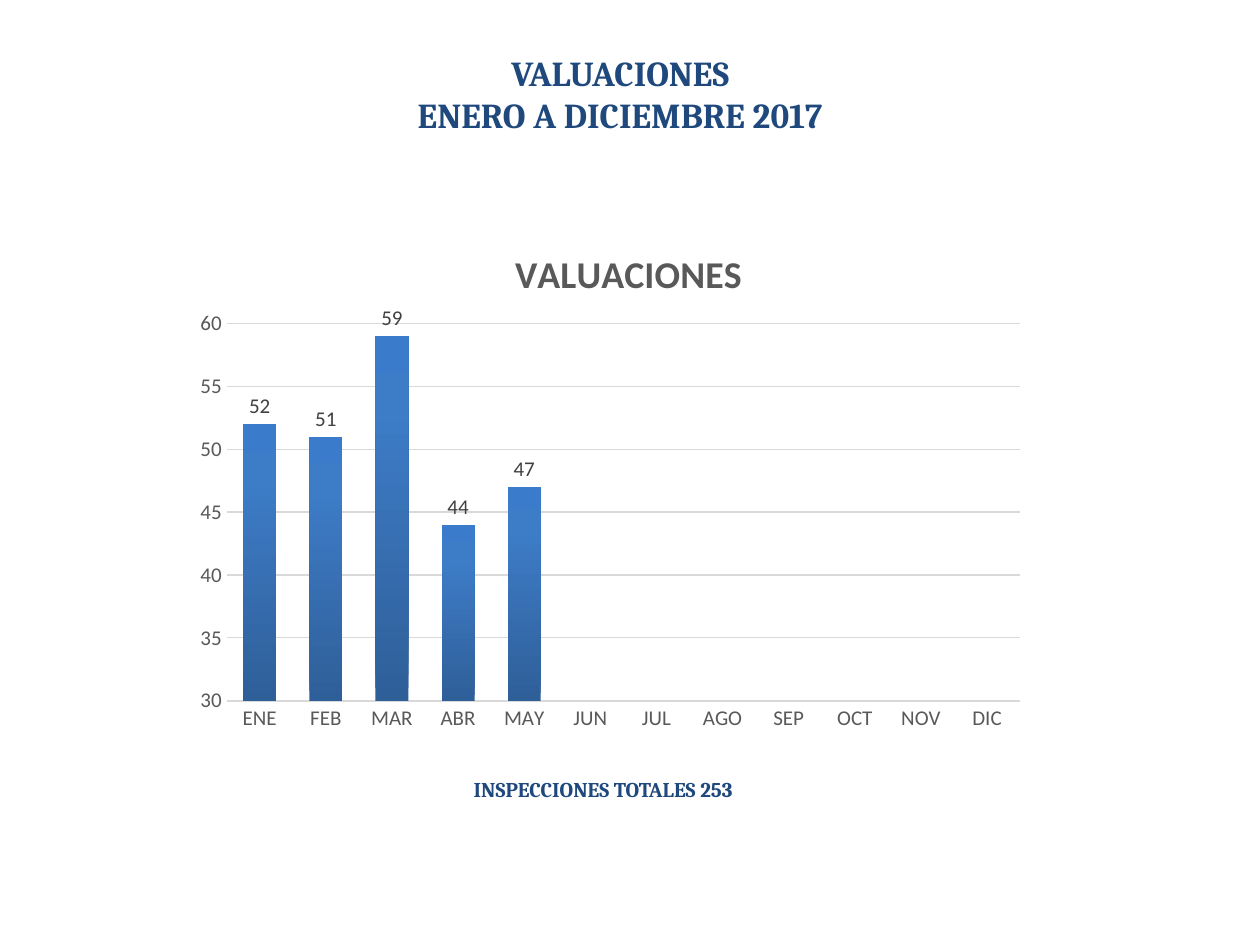
from dataclasses import dataclass

from copy import deepcopy
from lxml.etree import SubElement
from pptx import Presentation
from pptx.chart.chart import Chart
from pptx.chart.data import CategoryChartData
from pptx.dml.color import RGBColor
from pptx.enum.chart import XL_CHART_TYPE, XL_LABEL_POSITION, XL_TICK_MARK
from pptx.enum.text import MSO_ANCHOR, PP_ALIGN
from pptx.oxml import parse_xml
from pptx.oxml.ns import nsdecls, qn
from pptx.text.text import Font
from pptx.util import Cm, Pt


@dataclass(frozen=True)
class TextStyle:
    name: str
    size: float
    color: str
    bold: bool = False


@dataclass(frozen=True)
class Theme:
    heading: TextStyle = TextStyle("Cambria", 20, "1F497D", True)
    total: TextStyle = TextStyle("Cambria", 12, "1F497D", True)
    chart_title: TextStyle = TextStyle("Calibri", 21.6, "595959", True)
    axis: TextStyle = TextStyle("Calibri", 12, "595959")
    label: TextStyle = TextStyle("Calibri", 12, "404040")
    grid: str = "D9D9D9"
    bar_stops: tuple = ((0, "2F5F99"), (0.8, "3D7CC7"), (1, "3A7CCB"))


@dataclass(frozen=True)
class Frame:
    """A rectangle in centimetres."""
    left: float
    top: float
    width: float
    height: float

    def lengths(self) -> tuple:
        return Cm(self.left), Cm(self.top), Cm(self.width), Cm(self.height)


THEME = Theme()
TITLE_FRAME = Frame(7.92, 0.91, 9.17, 1.96)
CHART_FRAME = Frame(3.71, 4.32, 17.2, 10.59)
TOTAL_FRAME = Frame(9.3, 15.52, 6.2, 0.76)
MONTHS = "ENE FEB MAR ABR MAY JUN JUL AGO SEP OCT NOV DIC".split()
VALUATIONS = [52, 51, 59, 44, 47]


def apply_style(font: Font, style: TextStyle) -> None:
    font.name = style.name
    font.size = Pt(style.size)
    font.bold = style.bold
    font.color.rgb = RGBColor.from_string(style.color)


def fill_text(box, lines: list[str], style: TextStyle, align: PP_ALIGN, wrap: bool) -> None:
    frame = box.text_frame
    frame.text = "\n".join(lines)
    frame.word_wrap = wrap
    frame.vertical_anchor = MSO_ANCHOR.TOP
    for para in frame.paragraphs:
        para.alignment = align
        apply_style(para.font, style)


def place(parent, index: int, **fractions: float) -> None:
    """Give a chart part a manual layout in fractions of the chart."""
    for old in parent.findall(qn("c:layout")):
        parent.remove(old)
    layout = parse_xml(f"<c:layout {nsdecls('c')}><c:manualLayout/></c:layout>")
    modes = {"xMode": "edge", "yMode": "edge"}
    if "w" in fractions:
        modes = {"layoutTarget": "inner", **modes}
    for tag, value in {**modes, **fractions}.items():
        SubElement(layout[0], qn(f"c:{tag}")).set("val", str(value))
    parent.insert(index, layout)


def style_axes(chart: Chart) -> None:
    for axis in (chart.category_axis, chart.value_axis):
        axis.major_tick_mark = axis.minor_tick_mark = XL_TICK_MARK.NONE
        apply_style(axis.tick_labels.font, THEME.axis)
    values = chart.value_axis
    values.minimum_scale, values.maximum_scale, values.major_unit = 30, 60, 5
    values.format.line.fill.background()
    grid_line = values.major_gridlines.format.line
    for line, width in ((chart.category_axis.format.line, 1), (grid_line, 0.75)):
        line.color.rgb = RGBColor.from_string(THEME.grid)
        line.width = Pt(width)


def style_bars(chart: Chart) -> None:
    plot = chart.plots[0]
    plot.gap_width, plot.overlap, plot.vary_by_categories = 100, -24, False
    series = plot.series[0]
    fill = series.format.fill
    fill.gradient()
    fill.gradient_angle = 90
    stop_list = series.format.fill._fill._gradFill.find(qn("a:gsLst"))
    stop_list.append(deepcopy(stop_list[-1]))
    for stop, (position, color) in zip(fill.gradient_stops, THEME.bar_stops):
        stop.position = position
        stop.color.rgb = RGBColor.from_string(color)
    labels = series.data_labels
    labels.show_value = True
    labels.position = XL_LABEL_POSITION.OUTSIDE_END
    apply_style(labels.font, THEME.label)


def add_valuations_chart(page) -> None:
    data = CategoryChartData()
    data.categories = MONTHS
    blanks = [None] * (len(MONTHS) - len(VALUATIONS))
    data.add_series("Series 1", VALUATIONS + blanks)
    chart = page.shapes.add_chart(
        XL_CHART_TYPE.COLUMN_CLUSTERED, *CHART_FRAME.lengths(), data).chart
    chart.has_legend = False
    chart.font.name, chart.font.size = "Calibri", Pt(10)
    chart.has_title = True
    title = chart.chart_title
    title.text_frame.text = "VALUACIONES"
    apply_style(title.text_frame.paragraphs[0].font, THEME.chart_title)
    place(title._element, 1, x=0.38, y=0.05)
    plot_area = chart._chartSpace.chart.plotArea
    place(plot_area, 0, x=0.05, y=0.208, w=0.93, h=0.718)
    style_axes(chart)
    style_bars(chart)


def main() -> None:
    deck = Presentation()
    deck.slide_width, deck.slide_height = Cm(25.4), Cm(19.05)
    page = deck.slides.add_slide(deck.slide_layouts[5])

    total = page.shapes.add_textbox(*TOTAL_FRAME.lengths())
    fill_text(total, ["INSPECCIONES TOTALES 253"], THEME.total, PP_ALIGN.LEFT, True)

    title = page.shapes.title
    title.left, title.top, title.width, title.height = TITLE_FRAME.lengths()
    fill_text(title, ["VALUACIONES", "ENERO A DICIEMBRE 2017"],
              THEME.heading, PP_ALIGN.CENTER, False)

    add_valuations_chart(page)
    deck.save("out.pptx")


if __name__ == "__main__":
    main()
